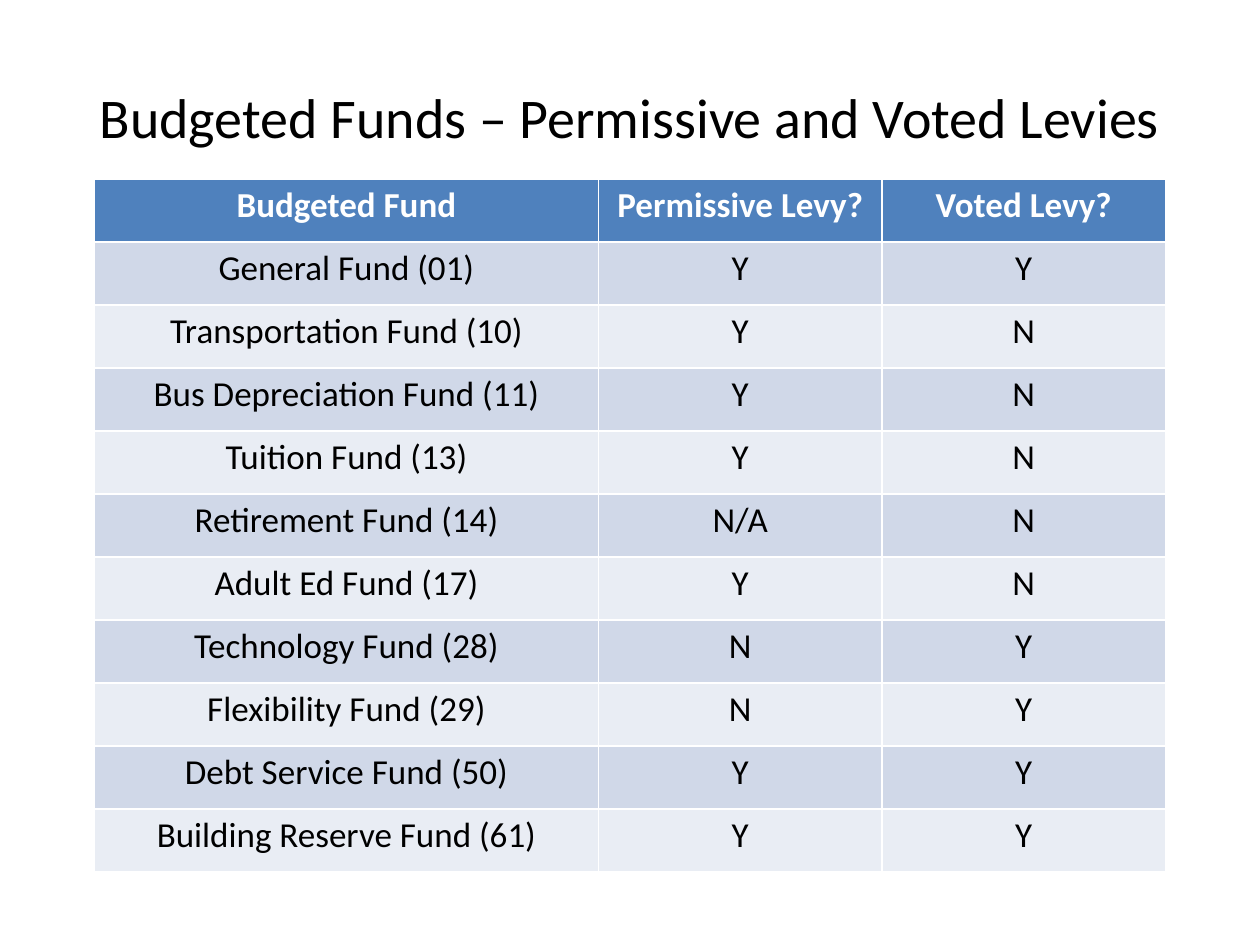
from pptx import Presentation
from pptx import util as u
from pptx.dml.color import RGBColor
from pptx.enum import text

WHITE = RGBColor(0xFF, 0xFF, 0xFF)
BLACK = RGBColor(0x00, 0x00, 0x00)
HEADER_BLUE = RGBColor(0x4F, 0x81, 0xBD)
BANDS = RGBColor(0xD0, 0xD8, 0xE8), RGBColor(0xE9, 0xED, 0xF4)

TITLE = "Budgeted Funds – Permissive and Voted Levies"
HEADINGS = "Budgeted Fund", "Permissive Levy?", "Voted Levy?"
FUNDS = [
    ("General Fund (01)", "Y", "Y"),
    ("Transportation Fund (10)", "Y", "N"),
    ("Bus Depreciation Fund (11)", "Y", "N"),
    ("Tuition Fund (13)", "Y", "N"),
    ("Retirement Fund (14)", "N/A", "N"),
    ("Adult Ed Fund (17)", "Y", "N"),
    ("Technology Fund (28)", "N", "Y"),
    ("Flexibility Fund (29)", "N", "Y"),
    ("Debt Service Fund (50)", "Y", "Y"),
    ("Building Reserve Fund (61)", "Y", "Y"),
]


class SlideBuilder:
    columns, rows = 40, 30
    font = "Calibri"

    def __init__(self, deck):
        self.cell_width = deck.slide_width / self.columns
        self.cell_height = deck.slide_height / self.rows
        self.slide = deck.slides.add_slide(deck.slide_layouts[5])

    def across(self, columns):
        return u.Emu(round(columns * self.cell_width))

    def down(self, rows):
        return u.Emu(round(rows * self.cell_height))

    def set_words(self, frame, words, size, color, bold=False):
        frame.text = words
        para = frame.paragraphs[0]
        para.alignment = text.PP_ALIGN.CENTER
        span = para.runs[0]
        for name, value in dict(name=self.font, size=u.Pt(size), bold=bold).items():
            setattr(span.font, name, value)
        span.font.color.rgb = color

    def title(self, words, left, top, width, height):
        box = self.slide.shapes.title
        place = dict(left=self.across(left), top=self.down(top),
                     width=self.across(width), height=self.down(height))
        for name, value in place.items():
            setattr(box, name, value)
        box.text_frame.vertical_anchor = text.MSO_ANCHOR.MIDDLE
        self.set_words(box.text_frame, words, 32, BLACK)

    def table(self, records, left, top, widths, row_height):
        table = self.slide.shapes.add_table(
            len(records), len(widths), self.across(left), self.down(top),
            self.across(sum(widths)), self.down(row_height * len(records))).table
        for column, width in zip(table.columns, widths):
            column.width = self.across(width)
        for index, (row, record) in enumerate(zip(table.rows, records)):
            row.height = self.down(row_height)
            header = index == 0
            fill = HEADER_BLUE if header else BANDS[(index - 1) % 2]
            for cell, words in zip(row.cells, record):
                cell.fill.solid()
                cell.fill.fore_color.rgb = fill
                cell.margin_left = cell.margin_right = u.Inches(0.07)
                cell.margin_top = cell.margin_bottom = u.Inches(0.04)
                self.set_words(cell.text_frame, words, 20, WHITE if header else BLACK, header)


def main():
    deck = Presentation()
    deck.slide_width, deck.slide_height = u.Inches(10), u.Inches(7.5)
    page = SlideBuilder(deck)
    page.table([HEADINGS, *FUNDS], left=3, top=5.68, widths=(16, 9, 9), row_height=2)
    page.title(TITLE, left=2, top=1.2, width=36, height=5)
    deck.save("out.pptx")


if __name__ == "__main__":
    main()
